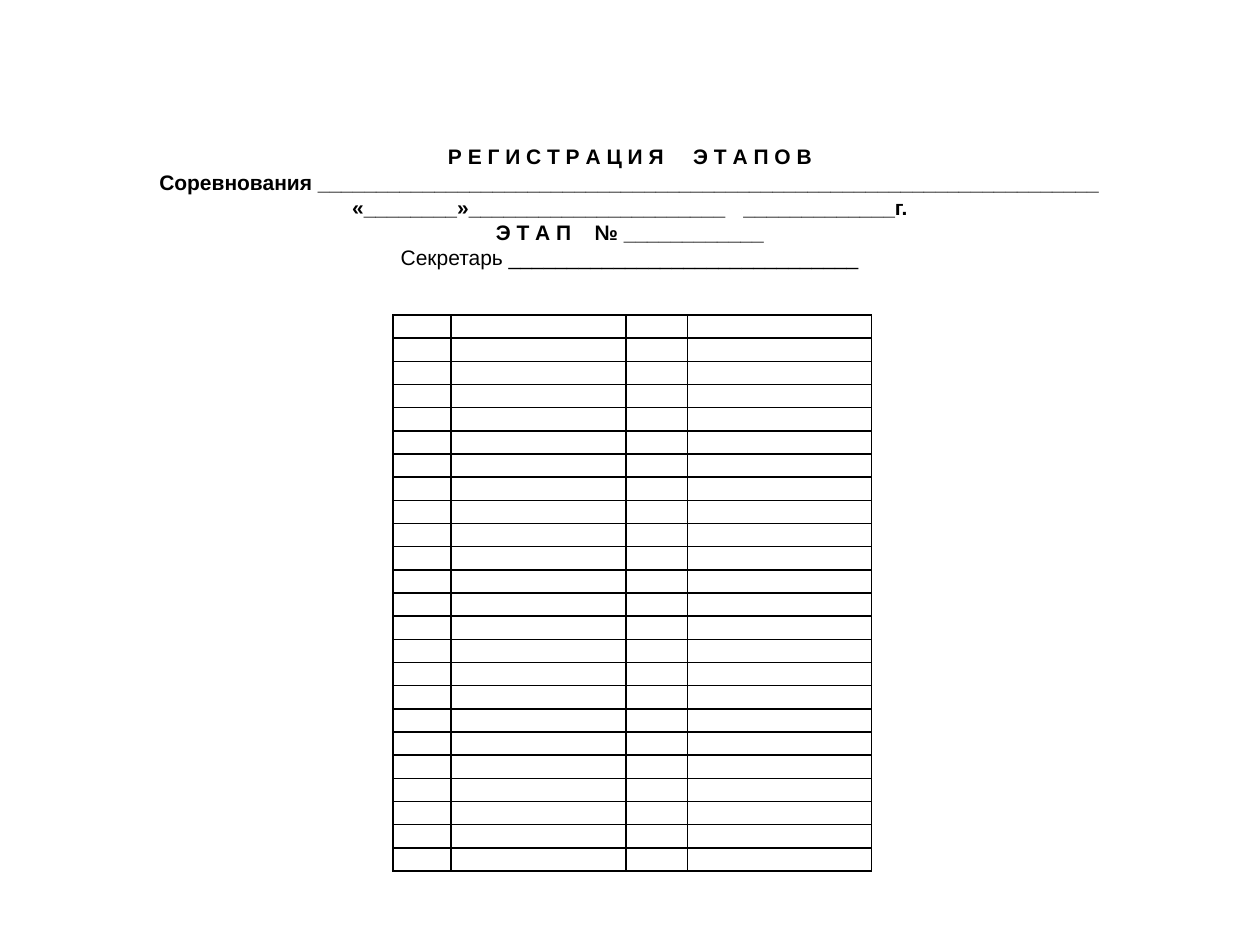
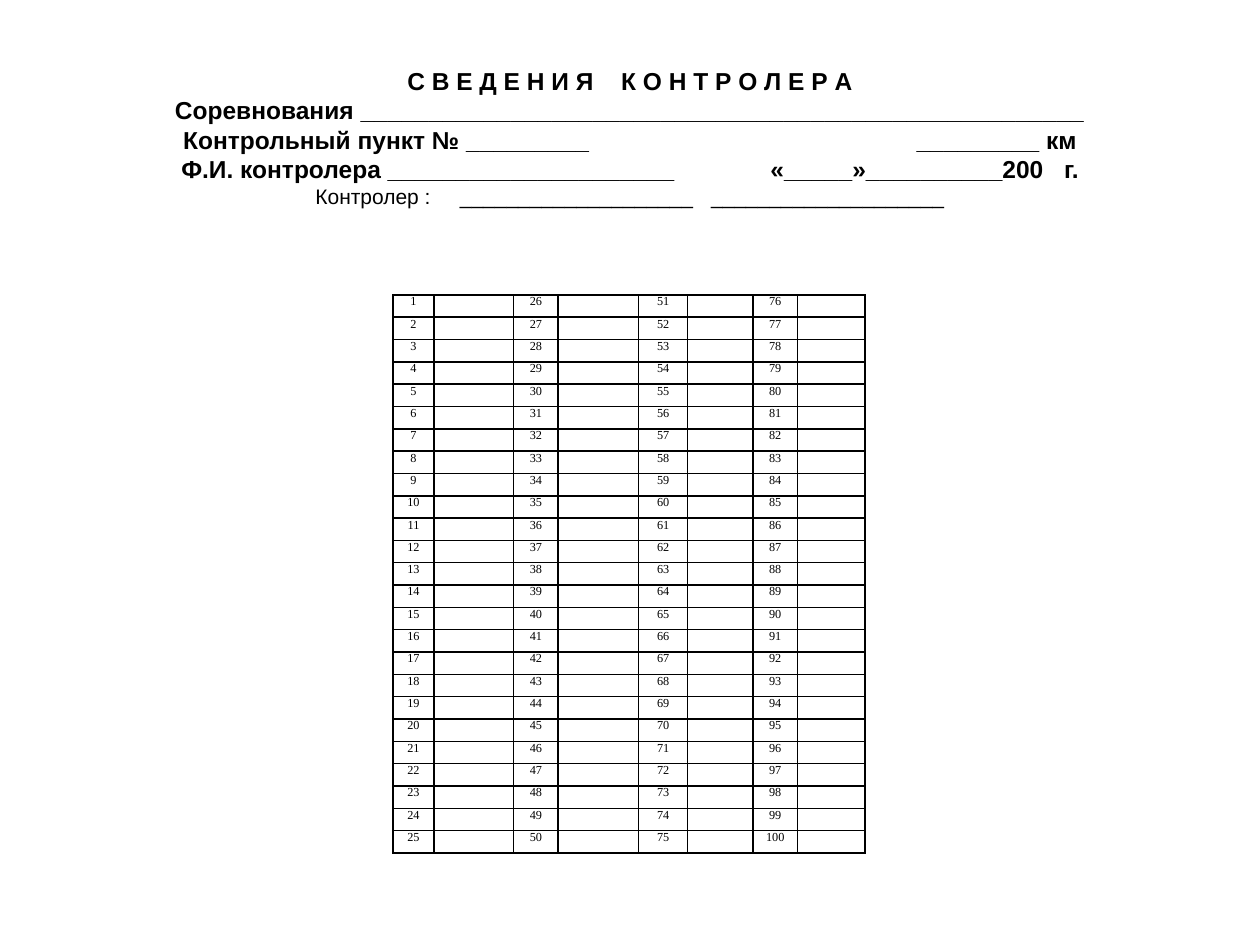
from lxml import etree
from pptx import Presentation
from pptx.dml.color import RGBColor
from pptx.enum.text import MSO_ANCHOR, MSO_AUTO_SIZE, PP_ALIGN
from pptx.oxml.ns import qn
from pptx.util import Pt

CENTER = PP_ALIGN.CENTER
TOP = MSO_ANCHOR.TOP
NO_AUTOFIT = MSO_AUTO_SIZE.NONE

# ---- Content: a number inside a line is a gap, counted in space widths ----
COLORS = {"ink": "000000"}
HEADER_FONT, TABLE_FONT = "Arial", "Times New Roman"
SLIDE_WIDTH, SLIDE_HEIGHT = 720, 540
TABLE_LEFT = 224.6
TABLE_FONT_SIZE = 7
SIGNATURE_SIZE = 12
LEADING = {12: 14.45, 14: 16.9}
SPACE_WIDTH = 0.278  # share of the font size

STAGE_ROWS, CONTROL_ROWS = 24, 25

FORMS = [
    {
        "header_top": 78.5,
        "header_size": 12,
        "lines": [
            ("Р Е Г И С Т Р А Ц И Я", 5, "Э Т А П О В"),
            ("Соревнования " + "_" * 67,),
            ("«________»" + "_" * 22, 3, "_" * 13 + "г."),
            ("Э Т А П", 4, "№ " + "_" * 12),
        ],
        "signature": ("Секретарь " + "_" * 30,),
        "table_top": 180,
        "columns": [33.1, 100.2, 35.1, 105.2],
        "row_height": 13.24,
        "rows": [[""] * 4 for _ in range(STAGE_ROWS)],
    },
    {
        "header_top": 33.8,
        "header_size": 14,
        "lines": [
            ("С В Е Д Е Н И Я", 4, "К О Н Т Р О Л Е Р А"),
            ("Соревнования " + "_" * 53,),
            ("Контрольный пункт № " + "_" * 9, 48, "_" * 9 + " км"),
            ("Ф.И. контролера " + "_" * 21, 14, "«_____»" + "_" * 10 + "200", 3, "г."),
        ],
        "signature": ("Контролер :", 5, "_" * 20, 3, "_" * 20),
        "table_top": 168.5,
        "columns": [23.4, 45.6, 25.4, 46, 28, 37.5, 25.3, 38.5],
        "row_height": 12.78,
        "rows": [
            [text for block in range(4)
             for text in (str(block * CONTROL_ROWS + row + 1), "")]
            for row in range(CONTROL_ROWS)
        ],
    },
]


# ---- Shared parts ----
def style_run(run, font, size, bold=False):
    run.font.name = font
    run.font.size = Pt(size)
    run.font.bold = bold
    run.font.color.rgb = RGBColor.from_string(COLORS["ink"])


def fill_line(paragraph, pieces, size, bold):
    paragraph.alignment = CENTER
    paragraph.line_spacing = Pt(LEADING[size])
    for piece in pieces:
        run = paragraph.add_run()
        is_gap = isinstance(piece, int)
        run.text = " " if is_gap else piece
        style_run(run, HEADER_FONT, size, bold)
        if is_gap:  # one space, widened by character spacing
            extra = (piece - 1) * SPACE_WIDTH * size
            run._r.get_or_add_rPr().set("spc", str(round(extra * 100)))


def add_header(slide, form):
    size = form["header_size"]
    lines = [(pieces, size, True) for pieces in form["lines"]]
    lines.append((form["signature"], SIGNATURE_SIZE, False))

    title = slide.shapes.title
    title.left, title.top = Pt(0), Pt(form["header_top"])
    title.width = Pt(SLIDE_WIDTH)
    title.height = Pt(sum(LEADING[line[1]] for line in lines) + 7.2)
    text_frame = title.text_frame
    text_frame.auto_size = NO_AUTOFIT
    text_frame.vertical_anchor = TOP
    text_frame.word_wrap = True
    for index, line in enumerate(lines):
        paragraph = text_frame.add_paragraph() if index else text_frame.paragraphs[0]
        fill_line(paragraph, *line)


def add_borders(cell):
    properties = cell._tc.get_or_add_tcPr()
    for side in ("lnL", "lnR", "lnT", "lnB"):
        line = etree.SubElement(properties, qn("a:" + side), w=str(Pt(1)))
        fill = etree.SubElement(line, qn("a:solidFill"))
        etree.SubElement(fill, qn("a:srgbClr"), val=COLORS["ink"])


def fill_cell(cell, text):
    cell.margin_left = cell.margin_right = Pt(3)
    cell.margin_top = cell.margin_bottom = Pt(0)
    add_borders(cell)
    cell.fill.background()
    paragraph = cell.text_frame.paragraphs[0]
    paragraph.alignment = CENTER
    if text:
        paragraph.text = text
        style_run(paragraph.runs[0], TABLE_FONT, TABLE_FONT_SIZE)
    # Keeps empty cells as low as the numbered ones
    etree.SubElement(paragraph._p, qn("a:endParaRPr"), sz=str(TABLE_FONT_SIZE * 100))


def add_grid(slide, form):
    rows, columns, row_height = form["rows"], form["columns"], form["row_height"]
    table = slide.shapes.add_table(
        len(rows), len(columns), Pt(TABLE_LEFT), Pt(form["table_top"]),
        Pt(sum(columns)), Pt(row_height * len(rows))).table
    table.first_row = table.horz_banding = False
    for column, width in zip(table.columns, columns):
        column.width = Pt(width)
    for row, texts in zip(table.rows, rows):
        row.height = Pt(row_height)
        for cell, text in zip(row.cells, texts):
            fill_cell(cell, text)


# ---- Slides ----
def main():
    presentation = Presentation()
    presentation.slide_width = Pt(SLIDE_WIDTH)
    presentation.slide_height = Pt(SLIDE_HEIGHT)
    title_only = presentation.slide_layouts[5]
    for form in FORMS:
        slide = presentation.slides.add_slide(title_only)
        add_header(slide, form)
        add_grid(slide, form)
    presentation.save("out.pptx")


if __name__ == "__main__":
    main()
